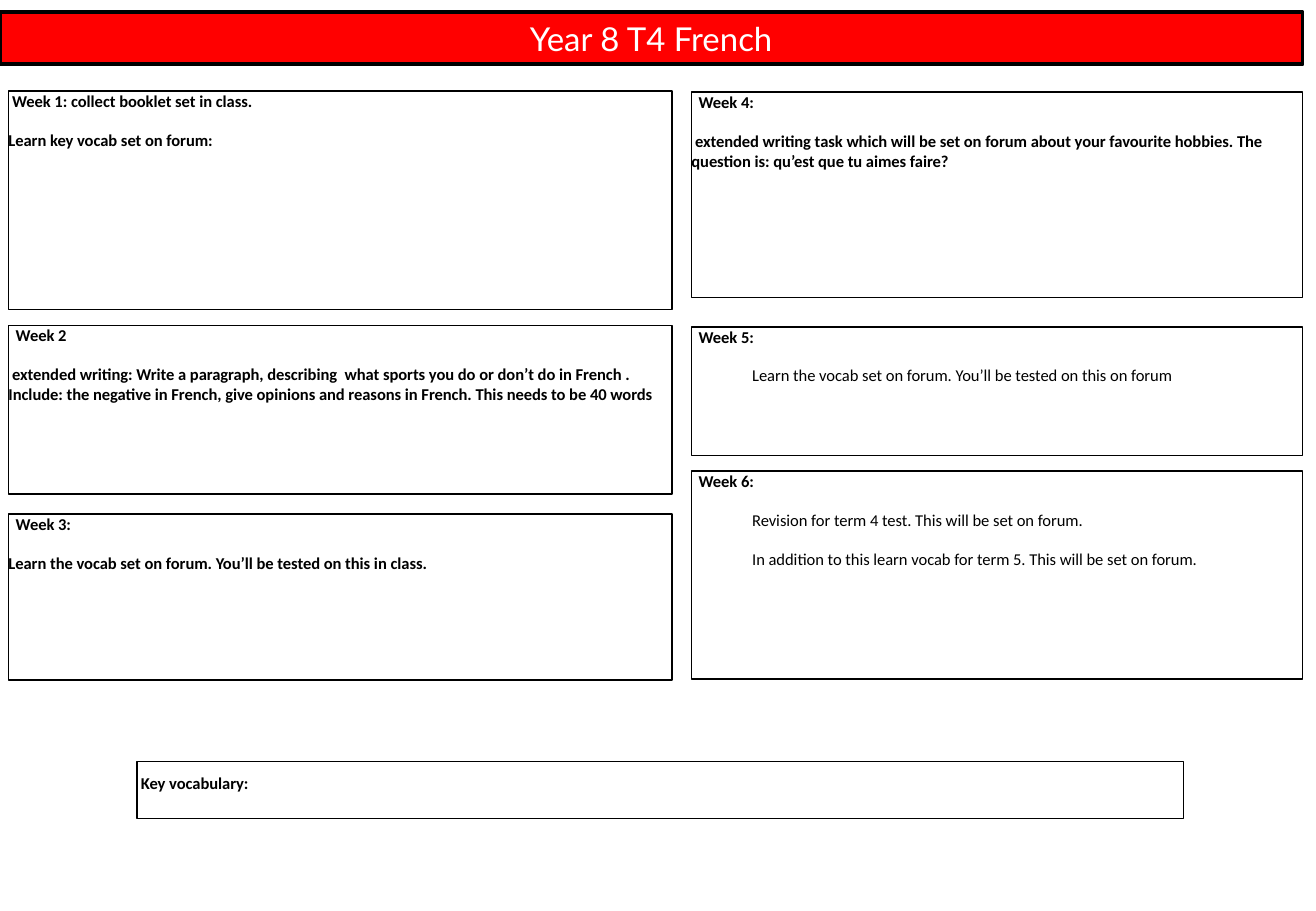
from pptx import Presentation
from pptx.dml.color import RGBColor
from pptx.enum.shapes import MSO_SHAPE
from pptx.enum.text import MSO_ANCHOR, MSO_AUTO_SIZE, PP_ALIGN
from pptx.util import Inches, Pt

RECTANGLE = MSO_SHAPE.RECTANGLE
TOP, MIDDLE = MSO_ANCHOR.TOP, MSO_ANCHOR.MIDDLE
LEFT, CENTER = PP_ALIGN.LEFT, PP_ALIGN.CENTER
NO_AUTOFIT = MSO_AUTO_SIZE.NONE
TITLE_ONLY = 5

# Content: each paragraph is (text, bold, left margin, first-line indent)
TITLE = "Year 8 T4 French"
NUDGE = 0.03
TASK_INDENT = 0.5
LEFT_WEEKS = [
    (0.75, 1.8, [
        ("Week 1: collect booklet set in class.", True, 0, NUDGE),
        ("Learn key vocab set on forum:", True, 0, 0)]),
    (2.68, 1.39, [
        ("Week 2", True, 0, 2 * NUDGE),
        ("extended writing: Write a paragraph, describing  what sports you do "
         "or don’t do in French . Include: the negative in French, give opinions "
         "and reasons in French. This needs to be 40 words", True, 0, NUDGE)]),
    (4.23, 1.37, [
        ("Week 3:", True, 0, 2 * NUDGE),
        ("Learn the vocab set on forum. You’ll be tested on this in class.",
         True, 0, 0)]),
]
RIGHT_WEEKS = [
    (0.76, 1.69, [
        ("Week 4:", True, 0, 2 * NUDGE),
        ("extended writing task which will be set on forum about your favourite "
         "hobbies. The question is: qu’est que tu aimes faire?", True, 0, NUDGE)]),
    (2.69, 1.06, [
        ("Week 5:", True, 0, 2 * NUDGE),
        ("Learn the vocab set on forum. You’ll be tested on this on forum",
         False, TASK_INDENT, 0)]),
    (3.88, 1.71, [
        ("Week 6:", True, 0, 2 * NUDGE),
        ("Revision for term 4 test. This will be set on forum.",
         False, TASK_INDENT, 0),
        ("In addition to this learn vocab for term 5. This will be set on forum.",
         False, TASK_INDENT, 0)]),
]
COLUMNS = [(0.07, 5.46, LEFT_WEEKS), (5.69, 5.03, RIGHT_WEEKS)]
VOCABULARY = [("Key vocabulary:", True, 0, NUDGE)]

COLORS = {"banner": "FF0000", "ink": "000000", "title": "FFFFFF"}


def color(name):
    return RGBColor.from_string(COLORS[name])


def outline(shape, width):
    shape.line.color.rgb = color("ink")
    shape.line.width = Pt(width)


def style_span(span, font, size, ink, bold):
    span.font.name = font
    span.font.size = Pt(size)
    span.font.color.rgb = color(ink)
    span.font.bold = bold


def add_box(page, left, top, width, height, paragraphs, inset_top=0):
    box = page.shapes.add_shape(RECTANGLE, Inches(left), Inches(top),
                                Inches(width), Inches(height))
    box.shadow.inherit = False
    box.fill.background()
    outline(box, 1)
    frame = box.text_frame
    frame.word_wrap = True
    frame.vertical_anchor = TOP
    frame.margin_left = frame.margin_right = frame.margin_bottom = 0
    frame.margin_top = Inches(inset_top)
    for number, (text, bold, margin, indent) in enumerate(paragraphs):
        para = frame.add_paragraph() if number else frame.paragraphs[0]
        para.alignment = LEFT
        if number:
            para.space_before = Pt(11.3)
        properties = para._p.get_or_add_pPr()
        properties.set("marL", str(Inches(margin)))
        properties.set("indent", str(Inches(indent)))
        span = para.add_run()
        span.text = text
        style_span(span, "Calibri", 9.75, "ink", bold)
    return box


deck = Presentation()
deck.slide_width, deck.slide_height = Inches(10.83), Inches(7.5)
page = deck.slides.add_slide(deck.slide_layouts[TITLE_ONLY])

# Title banner
banner = page.shapes.title
banner.left, banner.top = Inches(0), Inches(0.1)
banner.width, banner.height = Inches(10.72), Inches(0.43)
banner.fill.solid()
banner.fill.fore_color.rgb = color("banner")
outline(banner, 2.25)
banner.text_frame.auto_size = NO_AUTOFIT
banner.text_frame.vertical_anchor = MIDDLE
heading = banner.text_frame.paragraphs[0]
heading.alignment = CENTER
span = heading.add_run()
span.text = TITLE
style_span(span, "Lato", 19.5, "title", False)

# Weekly tasks in two columns
for left, width, weeks in COLUMNS:
    for top, height, paragraphs in weeks:
        add_box(page, left, top, width, height, paragraphs)

# Key vocabulary strip
strip = add_box(page, 1.13, 6.27, 8.61, 0.47, VOCABULARY, inset_top=0.13)
strip.text_frame.paragraphs[0].line_spacing = Pt(9.3)

deck.save("out.pptx")
